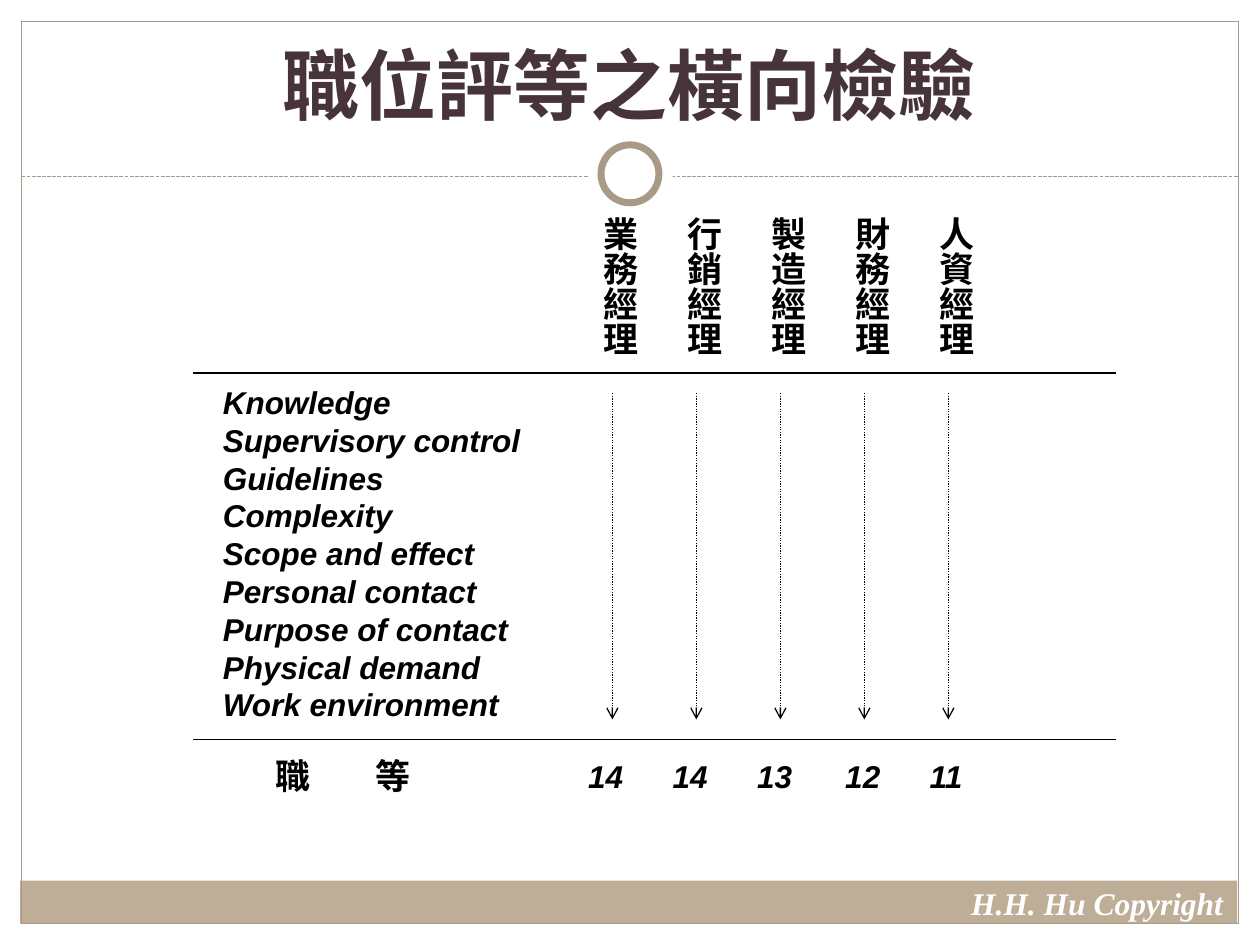
import pptx
import pptx.util
import pptx.dml.color
import pptx.enum.dml
import pptx.enum.shapes
import pptx.enum.text
import lxml.etree
from dataclasses import dataclass
from pptx.util import Inches, Pt

Align = pptx.enum.text.PP_ALIGN
Anchor = pptx.enum.text.MSO_ANCHOR
Dash = pptx.enum.dml.MSO_LINE
Shape = pptx.enum.shapes.MSO_SHAPE


@dataclass(frozen=True)
class Theme:
    ink: str = "000000"
    white: str = "FFFFFF"
    title: str = "46343A"
    tan: str = "BEAE98"
    edge: str = "A89A86"
    sans: str = "Arial"
    serif: str = "Times New Roman"
    head: int = 44
    label: int = 20
    body: int = 18
    thin: float = 0.75
    ring: float = 4


THEME = Theme()
FACTORS = ["Knowledge", "Supervisory control", "Guidelines", "Complexity",
           "Scope and effect", "Personal contact", "Purpose of contact",
           "Physical demand", "Work environment"]
# Job, grade and left edge of the grade
JOBS = [("業務經理", 14, 4.57), ("行銷經理", 14, 5.24), ("製造經理", 13, 5.91),
        ("財務經理", 12, 6.61), ("人資經理", 11, 7.28)]
PITCH = 2 / 3


def color(code):
    return pptx.dml.color.RGBColor.from_string(code)


def style(frame, size, name=THEME.sans, code=THEME.ink, italic=False):
    for para in frame.paragraphs:
        for run in para.runs:
            font = run.font
            font.size, font.name = Pt(size), name
            font.bold, font.italic = True, italic
            font.color.rgb = color(code)


def add_text(slide, box, text, size, **look):
    frame = slide.shapes.add_textbox(*map(Inches, box)).text_frame
    frame.word_wrap = False
    frame.text = text
    style(frame, size, **look)
    return frame


def add_shape(slide, kind, box, fill=None, line=None, width=THEME.thin):
    shape = slide.shapes.add_shape(kind, *map(Inches, box))
    shape.shadow.inherit = False
    if fill:
        shape.fill.solid()
        shape.fill.fore_color.rgb = color(fill)
    else:
        shape.fill.background()
    if line:
        shape.line.color.rgb = color(line)
        shape.line.width = Pt(width)
    else:
        shape.line.fill.background()


def add_line(slide, start, end, code=THEME.ink, dash=None, arrow=False):
    line = slide.shapes.add_connector(
        pptx.enum.shapes.MSO_CONNECTOR.STRAIGHT,
        *map(Inches, (*start, *end)))
    line.line.color.rgb = color(code)
    line.line.width = Pt(THEME.thin)
    if dash:
        line.line.dash_style = dash
    if arrow:
        tail = lxml.etree.SubElement(line.line._get_or_add_ln(),
                                     pptx.oxml.ns.qn("a:tailEnd"))
        tail.set("type", "arrow")
    lxml.etree.SubElement(line._element.spPr, pptx.oxml.ns.qn("a:effectLst"))


def add_frame(slide):
    """Draw the border, footer band and ring around the content."""
    add_shape(slide, Shape.RECTANGLE, (0.16, 6.99, 9.66, 0.34), THEME.tan)
    add_shape(slide, Shape.RECTANGLE, (0.17, 0.17, 9.66, 7.16),
              line=THEME.edge)
    add_line(slide, (0.17, 1.4), (9.83, 1.4), THEME.edge, Dash.SQUARE_DOT)
    add_shape(slide, Shape.OVAL, (4.67, 1.05, 0.67, 0.67), THEME.white)
    add_shape(slide, Shape.OVAL, (4.77, 1.15, 0.46, 0.46), THEME.white,
              THEME.edge, THEME.ring)
    add_text(slide, (7.61, 6.97, 2.27, 0.4), "H.H. Hu Copyright", THEME.body,
             name=THEME.serif, code=THEME.white, italic=True)


def add_title(slide, text):
    title = slide.shapes.title
    title.left, title.top = Inches(0.33), Inches(0.25)
    title.width, title.height = Inches(9.33), Inches(0.83)
    frame = title.text_frame
    frame.text = text
    frame.vertical_anchor = Anchor.BOTTOM
    frame.paragraphs[0].alignment = Align.CENTER
    style(frame, THEME.head, THEME.serif, THEME.title)


def add_jobs(slide):
    """Write the jobs as vertical columns, which run from right to left."""
    names = [job for job, _, _ in reversed(JOBS)]
    frame = add_text(slide, (4.57, 1.62, 3.23, 1.2), "\n".join(names),
                     THEME.label)
    frame._txBody.bodyPr.set("vert", "eaVert")
    for index, para in enumerate(frame.paragraphs):
        para.line_spacing = Pt(24)
        if index:
            para.space_before = Pt(24)


def add_grades(slide):
    frame = add_text(slide, (2.09, 5.94, 1.38, 0.44), "職\t等", THEME.label)
    props = frame.paragraphs[0]._p.get_or_add_pPr()
    tabs = lxml.etree.SubElement(props, pptx.oxml.ns.qn("a:tabLst"))
    stop = lxml.etree.SubElement(tabs, pptx.oxml.ns.qn("a:tab"))
    stop.set("pos", str(Inches(0.79)))
    stop.set("algn", "l")
    for index, (_, grade, left) in enumerate(JOBS):
        x = 4.86 + index * PITCH
        add_line(slide, (x, 3.12), (x, 5.71), dash=Dash.ROUND_DOT, arrow=True)
        add_text(slide, (left, 5.96, 0.48, 0.4), str(grade), THEME.body,
                 italic=True)


def main():
    deck = pptx.Presentation()
    deck.slide_width, deck.slide_height = Inches(10), Inches(7.5)
    slide = deck.slides.add_slide(deck.slide_layouts[5])
    add_frame(slide)
    add_title(slide, "職位評等之橫向檢驗")
    add_text(slide, (1.67, 2.99, 2.59, 2.83), "\n".join(FACTORS), THEME.body,
             italic=True)
    add_jobs(slide)
    for y in (2.96, 5.87):
        add_line(slide, (1.53, y), (8.86, y))
    add_grades(slide)
    deck.save("out.pptx")


if __name__ == "__main__":
    main()
